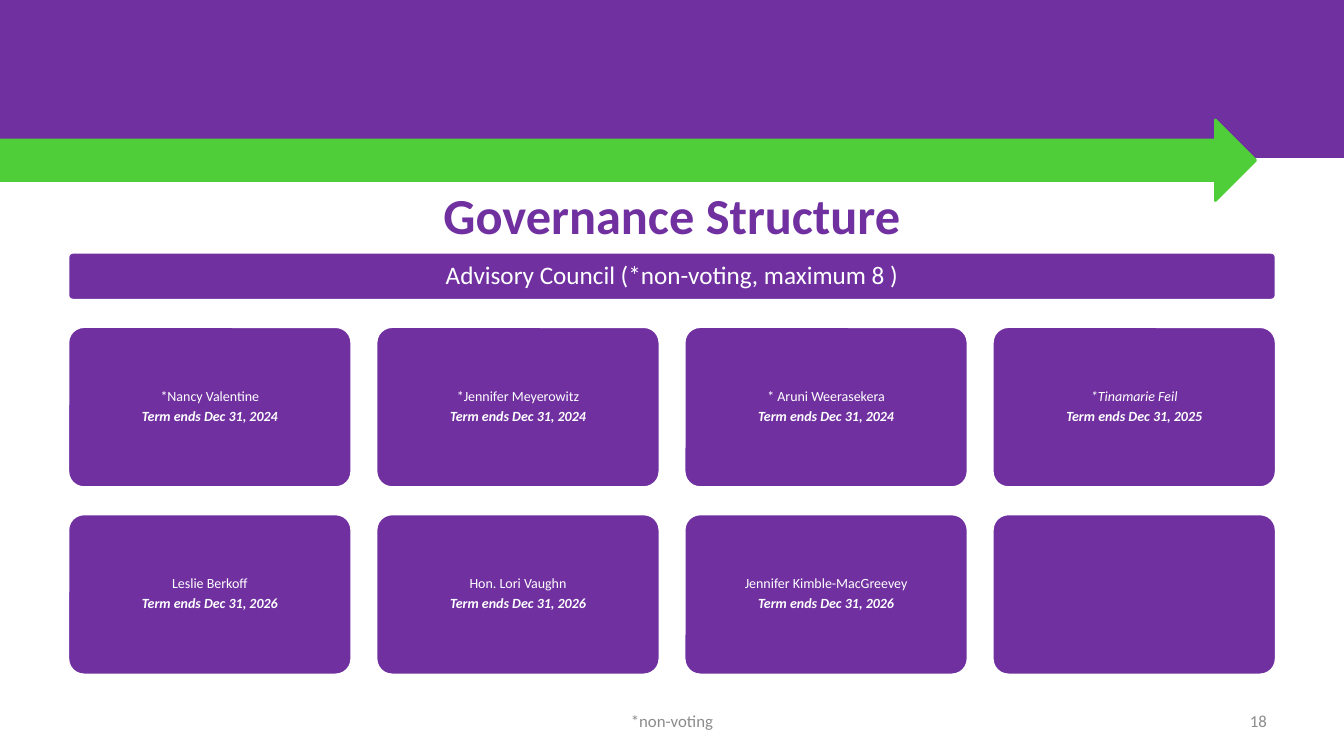
from pptx import Presentation
from pptx.dml.color import RGBColor
from pptx.enum.shapes import MSO_SHAPE as Geo
from pptx.enum.text import MSO_ANCHOR as Anchor, MSO_AUTO_SIZE as Fit, PP_ALIGN as Align
from pptx.util import Pt

PURPLE = RGBColor(0x70, 0x30, 0xA0)
GREEN = RGBColor(0x4F, 0xCE, 0x3A)
WHITE = RGBColor(0xFF, 0xFF, 0xFF)
GRAY = RGBColor(0x8C, 0x8C, 0x8C)

MEMBERS = [
    ("*Nancy Valentine", "2024", False),
    ("*Jennifer Meyerowitz", "2024", False),
    ("* Aruni Weerasekera", "2024", False),
    ("*Tinamarie Feil", "2025", True),
    ("Leslie Berkoff", "2026", False),
    ("Hon. Lori Vaughn", "2026", False),
    ("Jennifer Kimble-MacGreevey", "2026", False),
    None,
]


class Board:
    font = "Calibri"

    def __init__(self, deck):
        self.slide = deck.slides.add_slide(deck.slide_layouts[5])
        self.shapes = self.slide.shapes

    def shape(self, geo, left, top, width, height, fill, line):
        item = self.shapes.add_shape(geo, Pt(left), Pt(top), Pt(width), Pt(height))
        item.shadow.inherit = False
        item.fill.solid()
        item.fill.fore_color.rgb = fill
        item.line.color.rgb = line
        item.line.width = Pt(2)
        return item

    def frame(self, item, side=7.2, edge=3.6):
        frame = item.text_frame
        frame.word_wrap = True
        frame.auto_size = Fit.NONE
        frame.vertical_anchor = Anchor.MIDDLE
        frame.margin_left = frame.margin_right = Pt(side)
        frame.margin_top = frame.margin_bottom = Pt(edge)
        return frame

    def run(self, para, text, size, color, bold=False, italic=False, align=Align.CENTER):
        para.alignment = align
        run = para.add_run()
        run.text = text
        font = run.font
        font.name = self.font
        font.size = Pt(size)
        font.color.rgb = color
        font.bold = bold
        font.italic = italic

    def title(self, text, left, top, width, height):
        item = self.shapes.title
        item.left, item.top = Pt(left), Pt(top)
        item.width, item.height = Pt(width), Pt(height)
        self.run(self.frame(item).paragraphs[0], text, 36, PURPLE, bold=True)

    def panel(self, left, top, width, height, lines, size):
        item = self.shape(Geo.ROUNDED_RECTANGLE, left, top, width, height, PURPLE, WHITE)
        item.adjustments[0] = 0.1
        frame = self.frame(item, 6, 6)
        for index, (text, bold, italic) in enumerate(lines):
            para = frame.add_paragraph() if index else frame.paragraphs[0]
            para.line_spacing = 0.9
            para.space_after = Pt(size * 0.35)
            self.run(para, text, size, WHITE, bold, italic)

    def label(self, text, left, top, width, height, align):
        item = self.shapes.add_textbox(Pt(left), Pt(top), Pt(width), Pt(height))
        self.run(self.frame(item).paragraphs[0], text, 12, GRAY, align=align)


def main():
    deck = Presentation()
    deck.slide_width, deck.slide_height = Pt(960), Pt(540)
    board = Board(deck)

    board.shape(Geo.RECTANGLE, 0, 0.7, 960, 111, PURPLE, PURPLE)
    board.shape(Geo.RIGHT_ARROW, 0, 85.7, 897, 57.6, GREEN, GREEN)
    board.title("Governance Structure", 48, 132, 864, 42)

    head = [("Advisory Council (*non-voting, maximum 8 )", False, False)]
    board.panel(48.5, 180.2, 863, 34.2, head, 18)

    for index, member in enumerate(MEMBERS):
        row, col = divmod(index, 4)
        lines = []
        if member:
            name, year, slant = member
            lines = [(name, False, slant), (f"Term ends Dec 31, {year}", True, True)]
        board.panel(48.5 + col * 220.1, 233.3 + row * 133.8, 202.8, 115, lines, 10)

    board.label("18", 688, 500.5, 224, 28.8, Align.RIGHT)
    board.label("*non-voting", 328, 500.5, 304, 28.8, Align.CENTER)
    deck.save("out.pptx")


if __name__ == "__main__":
    main()
